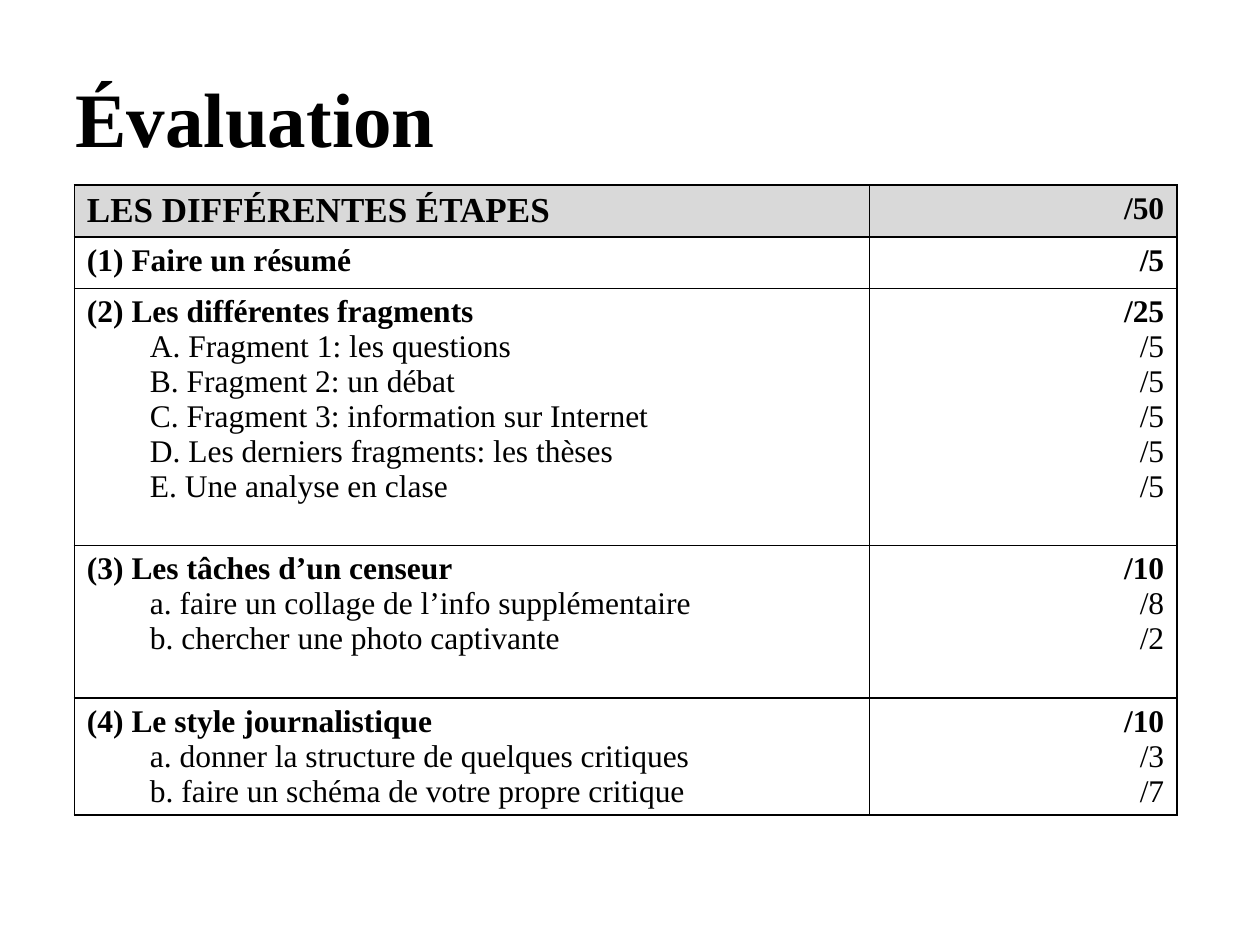
from dataclasses import dataclass

from lxml.etree import SubElement
from pptx import Presentation
from pptx.dml.color import RGBColor
from pptx.enum.text import MSO_ANCHOR, PP_ALIGN
from pptx.oxml.ns import qn
from pptx.util import Inches, Pt


@dataclass(frozen=True)
class Theme:
    """Colours, font and type sizes."""
    font: str = "Times New Roman"
    ink: str = "000000"
    header: str = "D9D9D9"
    paper: str = "FFFFFF"
    title: int = 44
    heading: int = 20
    body: int = 18
    border: int = 1


@dataclass(frozen=True)
class Step:
    """A graded step with its points and its subtasks."""
    name: str
    points: str
    height: float
    tasks: tuple[tuple[str, str], ...] = ()


THEME = Theme()
COLUMNS = (6.31, 2.44)
HEADER = Step("LES DIFFÉRENTES ÉTAPES", "/50", 0.41)
STEPS = (
    Step("(1) Faire un résumé", "/5", 0.41),
    Step("(2) Les différentes fragments", "/25", 2.04, (
        ("A. Fragment 1: les questions", "/5"),
        ("B. Fragment 2: un débat", "/5"),
        ("C. Fragment 3: information sur Internet", "/5"),
        ("D. Les derniers fragments: les thèses", "/5"),
        ("E. Une analyse en clase", "/5"),
    )),
    Step("(3) Les tâches d’un censeur", "/10", 1.21, (
        ("a. faire un collage de l’info supplémentaire", "/8"),
        ("b. chercher une photo captivante", "/2"),
    )),
    Step("(4) Le style journalistique", "/10", 0.93, (
        ("a. donner la structure de quelques critiques", "/3"),
        ("b. faire un schéma de votre propre critique", "/7"),
    )),
)


def write(p, text: str, *, size: int = THEME.body, bold: bool = False,
          align=PP_ALIGN.LEFT, indent: float = 0) -> None:
    """Write one formatted paragraph."""
    p.alignment = align
    if indent:
        p._p.get_or_add_pPr().set("marL", str(Inches(indent)))
    r = p.add_run()
    r.text = text
    r.font.name = THEME.font
    r.font.size = Pt(size)
    r.font.bold = bold
    r.font.color.rgb = RGBColor.from_string(THEME.ink)


def style_cell(cell, fill: str) -> None:
    """Give a cell its borders and fill."""
    tcPr = cell._tc.get_or_add_tcPr()
    for side in ("a:lnL", "a:lnR", "a:lnT", "a:lnB"):
        ln = SubElement(tcPr, qn(side), w=str(Pt(THEME.border)))
        SubElement(SubElement(ln, qn("a:solidFill")), qn("a:srgbClr"), val=THEME.ink)
    cell.fill.solid()
    cell.fill.fore_color.rgb = RGBColor.from_string(fill)


def fill_cell(cell, head: str, tasks: list[str], *, size: int = THEME.body,
              align=PP_ALIGN.LEFT, indent: float = 0) -> None:
    """Write a bold head and its plain subtasks."""
    tf = cell.text_frame
    write(tf.paragraphs[0], head, size=size, bold=True, align=align)
    for task in tasks:
        write(tf.add_paragraph(), task, align=align, indent=indent)


def add_grades(s, steps: tuple[Step, ...]) -> None:
    """Draw the grading table."""
    height = sum(step.height for step in steps)
    table = s.shapes.add_table(len(steps), len(COLUMNS), Inches(0.59), Inches(1.47),
                               Inches(sum(COLUMNS)), Inches(height)).table
    table.first_row = table.horz_banding = False
    for column, width in zip(table.columns, COLUMNS):
        column.width = Inches(width)
    for row, step in zip(table.rows, steps):
        row.height = Inches(step.height)
        is_header = step is HEADER
        for cell in row.cells:
            style_cell(cell, THEME.header if is_header else THEME.paper)
        name, points = row.cells
        fill_cell(name, step.name, [task for task, _ in step.tasks], indent=0.5,
                  size=THEME.heading if is_header else THEME.body)
        fill_cell(points, step.points, [mark for _, mark in step.tasks],
                  align=PP_ALIGN.RIGHT)


def main() -> None:
    """Build and save the slide."""
    prs = Presentation()
    prs.slide_width, prs.slide_height = Inches(10), Inches(7.5)
    s = prs.slides.add_slide(prs.slide_layouts[5])
    title = s.shapes.title
    title.left, title.top = Inches(0.5), Inches(0.3)
    title.width, title.height = Inches(9), Inches(1.25)
    title.text_frame.vertical_anchor = MSO_ANCHOR.MIDDLE
    write(title.text_frame.paragraphs[0], "Évaluation", size=THEME.title, bold=True)
    add_grades(s, (HEADER, *STEPS))
    prs.save("out.pptx")


if __name__ == "__main__":
    main()
